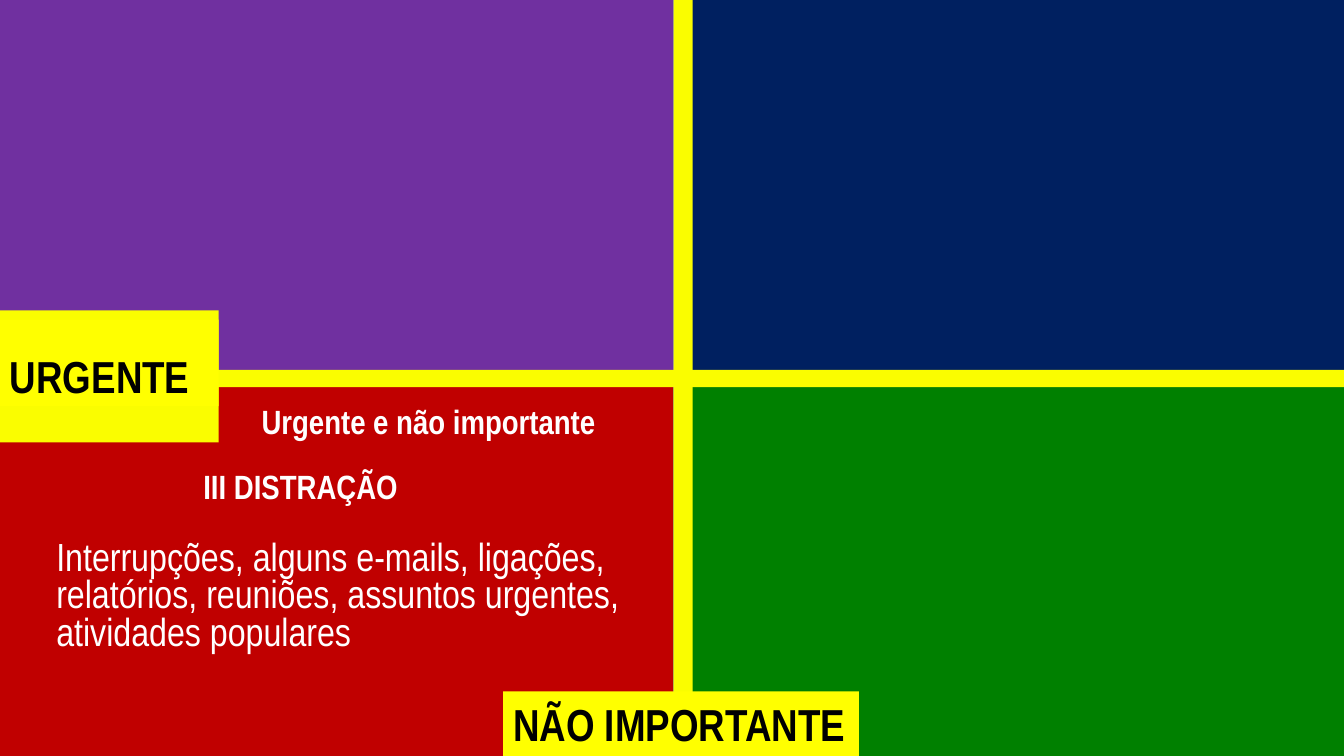
from lxml.etree import SubElement, Element
from pptx import Presentation
from pptx.dml.color import RGBColor
from pptx.enum.text import MSO_ANCHOR, PP_ALIGN
from pptx.oxml.ns import qn
from pptx.util import Inches, Pt

WIDE, HIGH = 13.33, 7.5
MID_X, MID_Y = 6.68, 3.75
YELLOW, BRIGHT = "FAFD00", "FFFF00"
WHITE, BLACK = "FFFFFF", "000000"


def color(code):
    return RGBColor.from_string(code)


class Deck:
    face = "Arial Narrow"

    def __init__(self):
        self.file = Presentation()
        self.file.slide_width = Inches(WIDE)
        self.file.slide_height = Inches(HIGH)
        self.slide = self.file.slides.add_slide(self.file.slide_layouts[5])

    def block(self, box, fill):
        shape = self.slide.shapes.add_shape(1, *map(Inches, box))
        shape.shadow.inherit = False
        shape.fill.solid()
        shape.fill.fore_color.rgb = color(fill)
        shape.line.fill.background()
        return shape

    def letter(self, shape, text, size, ink, bold=True, anchor=MSO_ANCHOR.TOP,
               wrap=True, **para):
        frame = shape.text_frame
        form = {"word_wrap": wrap, "vertical_anchor": anchor}
        for side in ("left", "right"):
            form["margin_" + side] = Inches(0.1)
        for side in ("top", "bottom"):
            form["margin_" + side] = Inches(0.05)
        for name, value in form.items():
            setattr(frame, name, value)
        line = frame.paragraphs[0]
        for name, value in ({"alignment": PP_ALIGN.LEFT} | para).items():
            setattr(line, name, value)
        run = line.add_run()
        run.text = text
        font = {"name": self.face, "size": Pt(size), "bold": bold}
        for name, value in font.items():
            setattr(run.font, name, value)
        run.font.color.rgb = color(ink)
        return run

    def title(self, box, text, **form):
        shapes = self.slide.shapes
        shape = shapes.title
        shape.left, shape.top, shape.width, shape.height = map(Inches, box)
        self.glow(self.letter(shape, text, 24, WHITE, **form))
        # Bring the title in front of the quadrants
        shapes.element.append(shape.element)

    def text(self, box, text, size, **form):
        shape = self.slide.shapes.add_textbox(*map(Inches, box))
        self.letter(shape, text, size, WHITE, **form)

    def label(self, box, text, **form):
        self.letter(self.block(box, BRIGHT), text, 32, BLACK, **form)

    def glow(self, run):
        # Soft dark shadow behind the letters
        fill = run.font.fill.fore_color and run._r.rPr.find(qn("a:solidFill"))
        effects = Element(qn("a:effectLst"))
        fill.addnext(effects)
        shade = SubElement(effects, qn("a:outerShdw"), blurRad="38100",
                           dist="38100", dir="2700000", algn="tl")
        SubElement(shade, qn("a:srgbClr"), val=BLACK)


def main():
    deck = Deck()

    # Four quadrants
    fills = [["7030A0", "002060"], ["C00000", "008000"]]
    cols = [(0, MID_X), (MID_X, WIDE - MID_X)]
    rows = [(0, MID_Y), (MID_Y, HIGH - MID_Y)]
    for (top, high), line in zip(rows, fills):
        for (left, wide), fill in zip(cols, line):
            deck.block((left, top, wide, high), fill)

    # Yellow cross
    deck.block((0, 3.67, WIDE, 0.17), YELLOW)
    deck.block((MID_X, 0, 0.19, HIGH), YELLOW)

    # Axis labels
    deck.block((0, 3.08, 2.17, 1.31), YELLOW)
    deck.label((0, 3.17, 2.17, 0.86), "URGENTE",
               anchor=MSO_ANCHOR.BOTTOM, line_spacing=0.7)
    deck.label((4.99, 6.86, 3.53, 0.64), "NÃO IMPORTANTE", wrap=False)

    # Third quadrant
    center = {"alignment": PP_ALIGN.CENTER}
    deck.title((1.79, 4, 4.92, 0.42), "Urgente e não importante",
               line_spacing=0.8, **center)
    deck.text((0.29, 4.57, 5.38, 0.5), "III DISTRAÇÃO", 24, **center)
    deck.text((0.46, 5.32, 5.95, 1.23),
              "Interrupções, alguns e-mails, ligações, relatórios, reuniões, "
              "assuntos urgentes, atividades populares",
              28, bold=False, line_spacing=0.8)

    deck.file.save("out.pptx")


if __name__ == "__main__":
    main()
